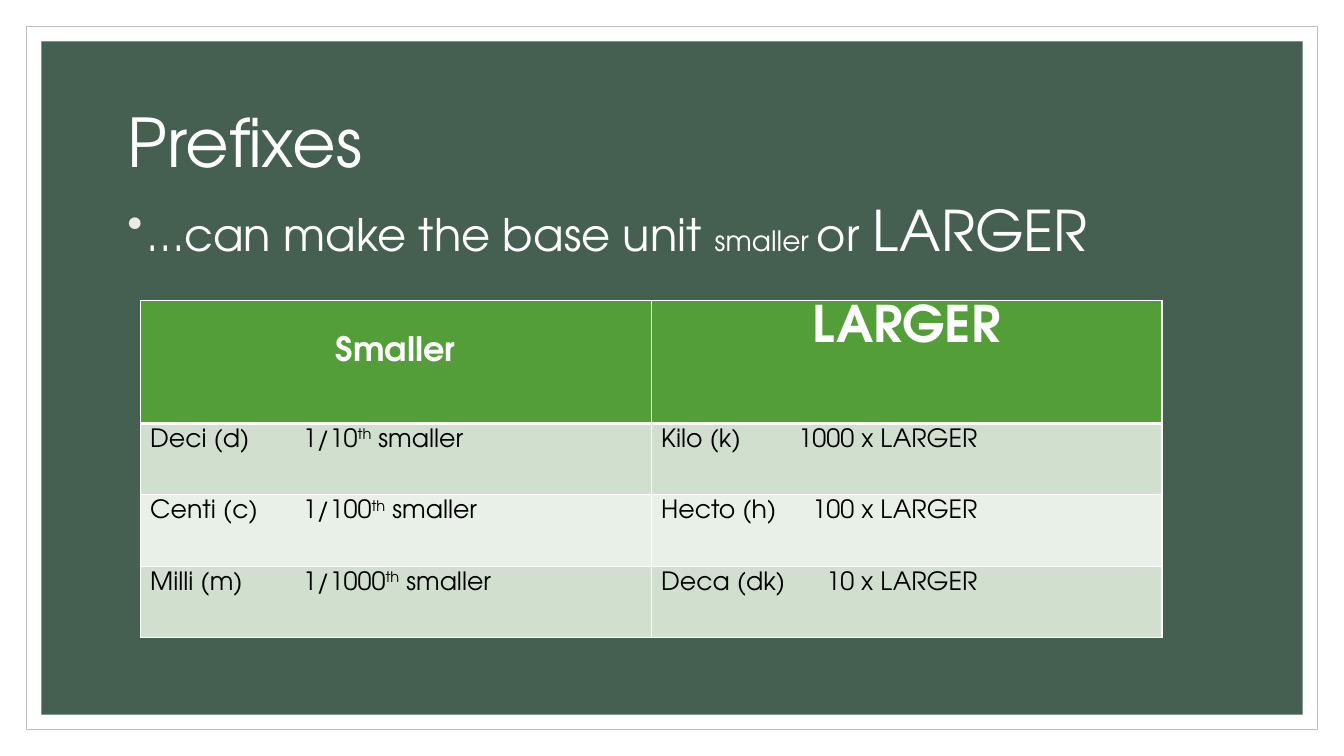
from lxml import etree
from pptx import Presentation, util as u
from pptx.dml.color import RGBColor
from pptx.enum import shapes, text
from pptx.oxml.ns import qn

FONT = "TeX Gyre Adventor"
WHITE = RGBColor(0xFF, 0xFF, 0xFF)
BLACK = RGBColor(0x00, 0x00, 0x00)
GREY = RGBColor(0xBF, 0xBF, 0xBF)
DARK_GREEN = RGBColor(0x45, 0x5F, 0x51)
HEADER_GREEN = RGBColor(0x54, 0x9E, 0x39)
BANDS = [RGBColor(0xD1, 0xDF, 0xCE), RGBColor(0xE9, 0xF0, 0xE8)]
BULLET = RGBColor(0xEE, 0xEB, 0xE3)

SLIDE_WIDTH, SLIDE_HEIGHT = 960, 540
COLUMN_WIDTH, HEADER_HEIGHT, ROW_HEIGHT = 365, 87.8, 51.1

# Header: wording, size, top margin
HEADERS = [("Smaller", 24, 26), ("LARGER", 36, 3.6)]
# Each row: smaller prefix, its denominator, larger prefix, its factor
PREFIXES = [
    ("Deci (d)", "1/10", "Kilo (k)", "1000"),
    ("Centi (c)", "1/100", "Hecto (h)", "100"),
    ("Milli (m)", "1/1000", "Deca (dk)", "10"),
]


def add_run(paragraph, wording, size, color=WHITE, bold=False, baseline=None):
    run = paragraph.add_run()
    run.text = wording
    run.font.color.rgb = color
    formats = {"name": FONT, "size": u.Pt(size), "bold": bold}
    for name, value in formats.items():
        setattr(run.font, name, value)
    if baseline:
        run.font._element.set("baseline", str(baseline))


def add_frame(slide, inset, fill, line=None):
    """Add a rectangle at an equal distance from all slide edges."""
    shape = slide.shapes.add_shape(
        shapes.MSO_SHAPE.RECTANGLE, u.Pt(inset), u.Pt(inset),
        u.Pt(SLIDE_WIDTH - 2 * inset), u.Pt(SLIDE_HEIGHT - 2 * inset))
    shape.shadow.inherit = False
    shape.fill.solid()
    shape.fill.fore_color.rgb = fill
    if line is None:
        shape.line.fill.background()
    else:
        shape.line.color.rgb = line
        shape.line.width = u.Pt(0.5)


def add_text(slide, top, height, runs, anchor):
    box = slide.shapes.add_textbox(u.Pt(84), u.Pt(top), u.Pt(792), u.Pt(height))
    formats = {"word_wrap": True, "vertical_anchor": anchor,
               "auto_size": text.MSO_AUTO_SIZE.NONE}
    for name, value in formats.items():
        setattr(box.text_frame, name, value)
    paragraph = box.text_frame.paragraphs[0]
    for wording, size in runs:
        add_run(paragraph, wording, size)
    return paragraph


def set_bullet(paragraph, indent):
    properties = paragraph._p.get_or_add_pPr()
    properties.set("marL", str(u.Pt(indent)))
    properties.set("indent", str(-u.Pt(indent)))
    color = etree.SubElement(properties, qn("a:buClr"))
    etree.SubElement(color, qn("a:srgbClr"), val=str(BULLET))
    etree.SubElement(properties, qn("a:buChar"), char="•")


def set_tab(paragraph, position, alignment):
    tabs = etree.SubElement(paragraph._p.get_or_add_pPr(), qn("a:tabLst"))
    etree.SubElement(tabs, qn("a:tab"), pos=str(u.Pt(position)), algn=alignment)


def style_cell(cell, fill, top_width, bottom_width):
    cell.fill.solid()
    cell.fill.fore_color.rgb = fill
    widths = {"lnL": 1, "lnR": 1, "lnT": top_width, "lnB": bottom_width}
    properties = cell._tc.get_or_add_tcPr()
    for index, (side, width) in enumerate(widths.items()):
        line = etree.Element(qn(f"a:{side}"), w=str(u.Pt(width)))
        solid = etree.SubElement(line, qn("a:solidFill"))
        etree.SubElement(solid, qn("a:srgbClr"), val=str(WHITE))
        properties.insert(index, line)


def fill_header(table):
    for column, (wording, size, margin) in enumerate(HEADERS):
        cell = table.cell(0, column)
        style_cell(cell, HEADER_GREEN, 1, 3)
        cell.margin_top = u.Pt(margin)
        paragraph = cell.text_frame.paragraphs[0]
        paragraph.alignment = text.PP_ALIGN.CENTER
        add_run(paragraph, wording, size, bold=True)


def fill_prefix_row(table, row, prefixes):
    smaller, fraction, larger, factor = prefixes
    cells = [table.cell(row, column) for column in range(2)]
    for cell in cells:
        style_cell(cell, BANDS[(row - 1) % 2], 3 if row == 1 else 1, 1)
    left, right = [cell.text_frame.paragraphs[0] for cell in cells]
    set_tab(left, 109, "l")
    add_run(left, f"{smaller}\t{fraction}", 18, BLACK)
    add_run(left, "th", 18, BLACK, baseline=30000)
    add_run(left, " smaller", 18, BLACK)
    set_tab(right, 226, "r")
    add_run(right, f"{larger}\t{factor} x LARGER", 18, BLACK)


def add_prefix_table(slide):
    rows = len(PREFIXES) + 1
    table = slide.shapes.add_table(
        rows, 2, u.Pt(100.1), u.Pt(214.6), u.Pt(2 * COLUMN_WIDTH),
        u.Pt(HEADER_HEIGHT + len(PREFIXES) * ROW_HEIGHT)).table
    for column in table.columns:
        column.width = u.Pt(COLUMN_WIDTH)
    for index, row in enumerate(table.rows):
        row.height = u.Pt(ROW_HEIGHT if index else HEADER_HEIGHT)
    fill_header(table)
    for row, prefixes in enumerate(PREFIXES, start=1):
        fill_prefix_row(table, row, prefixes)


def main():
    presentation = Presentation()
    presentation.slide_width = u.Pt(SLIDE_WIDTH)
    presentation.slide_height = u.Pt(SLIDE_HEIGHT)
    slide = presentation.slides.add_slide(presentation.slide_layouts[6])

    # Background frames
    add_frame(slide, 18.7, WHITE, GREY)
    add_frame(slide, 29.5, DARK_GREEN)

    # Title and statement
    title = add_text(slide, 50.4, 108, [("Prefixes", 48)], text.MSO_ANCHOR.MIDDLE)
    title.line_spacing = 0.9
    statement = add_text(
        slide, 136.1, 339,
        [("…can make the base unit ", 32), ("smaller ", 20), ("or ", 32), ("LARGER", 40)],
        text.MSO_ANCHOR.TOP)
    statement.space_before = u.Pt(9)
    set_bullet(statement, 14.4)

    # Table of prefixes
    add_prefix_table(slide)
    presentation.save("out.pptx")


if __name__ == "__main__":
    main()
